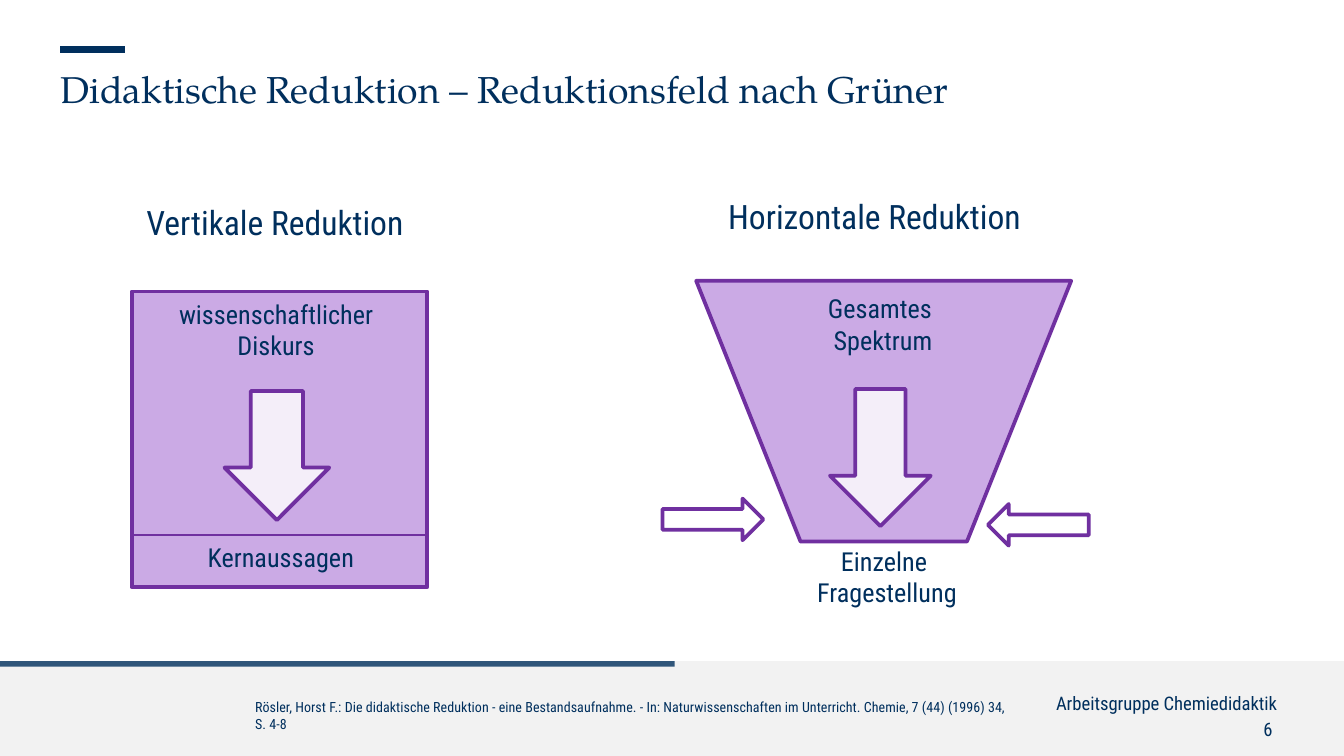
from lxml import etree
from pptx import Presentation
from pptx.dml.color import RGBColor
from pptx.enum.shapes import MSO_CONNECTOR, MSO_SHAPE
from pptx.enum.text import MSO_ANCHOR, PP_ALIGN
from pptx.oxml.ns import qn
from pptx.util import Inches, Pt

LEFT, CENTER, RIGHT = PP_ALIGN.LEFT, PP_ALIGN.CENTER, PP_ALIGN.RIGHT
RECTANGLE, TRAPEZOID = MSO_SHAPE.RECTANGLE, MSO_SHAPE.TRAPEZOID
ARROW = MSO_SHAPE.RIGHT_ARROW
TOP, STRAIGHT = MSO_ANCHOR.TOP, MSO_CONNECTOR.STRAIGHT

THEME = {
    "navy": "002F5D", "grey": "F2F2F2", "lilac": "BF95DF",
    "purple": "7030A0", "white": "FFFFFF",
    "body": "Roboto Condensed", "serif": "TeX Gyre Pagella",
    "title": 20, "heading": 18, "label": 14, "footer": 10, "source": 7.5,
    "outline": 2, "divider": 1, "accent": 3.5,
}

# kind, (left, top, width, height), fill, opacity %, outline, rotation
FOOTER_SHAPES = [
    (RECTANGLE, (0, 4.92, 10, 0.71), "grey", 100, None, 0),
    (RECTANGLE, (0, 4.92, 5.02, 0.04), "navy", 80, None, 0),
]
FIELD_SHAPES = [
    (TRAPEZOID, (5.18, 2.09, 2.79, 1.94), "lilac", 80, "purple", 180),
    (ARROW, (6.04, 3.03, 1.02, 0.75), "white", 80, "purple", 90),
    (ARROW, (4.93, 3.71, 0.75, 0.31), "white", 80, "purple", 0),
    (ARROW, (7.35, 3.75, 0.75, 0.31), "white", 80, "purple", 180),
    (RECTANGLE, (0.98, 2.17, 2.2, 2.2), "lilac", 80, "purple", 0),
    (ARROW, (1.58, 3, 0.96, 0.78), "white", 80, "purple", 90),
]
TRAPEZOID_SLANT = 0.4

# start, end, color, width
LINES = [
    ((0.45, 0.37), (0.93, 0.37), "navy", "accent"),
    ((0.98, 3.98), (3.19, 3.98), "purple", "divider"),
]

# paragraphs, (left, top, width, height), size, font, alignment, has insets
TEXTS = [
    (["Arbeitsgruppe Chemiedidaktik"], (3.38, 5.1, 6.22, 0.16),
     "footer", "body", RIGHT, True),
    (["6 "], (3.85, 5.34, 5.65, 0.17), "footer", "body", RIGHT, False),
    (["Didaktische Reduktion – Reduktionsfeld nach Grüner"],
     (0.45, 0.49, 7, 0.34), "title", "serif", LEFT, False),
    (["Rösler, Horst F.: Die didaktische Reduktion - eine Bestandsaufnahme. - "
      "In: Naturwissenschaften im Unterricht. Chemie, 7 (44) (1996) 34, S. 4-8"],
     (1.8, 5.15, 5.83, 0.44), "source", "body", LEFT, True),
    (["Horizontale Reduktion"], (5.32, 1.41, 3.14, 0.46),
     "heading", "body", LEFT, True),
    (["Gesamtes ", "Spektrum"], (5.9, 2.13, 1.34, 0.66),
     "label", "body", CENTER, True),
    (["Einzelne ", "Fragestellung"], (5.78, 4.01, 1.64, 0.66),
     "label", "body", CENTER, True),
    (["Vertikale Reduktion"], (0.99, 1.45, 2.92, 0.53),
     "heading", "body", LEFT, True),
    (["wissenschaftlicher", "Diskurs"], (0.92, 2.17, 2.27, 0.75),
     "label", "body", CENTER, True),
    (["Kernaussagen"], (1.2, 3.98, 1.78, 0.44),
     "label", "body", CENTER, True),
]


def color(name):
    return RGBColor.from_string(THEME[name])


def add_shape(page, kind, place, fill, opacity, outline, rotation):
    shape = page.shapes.add_shape(kind, *map(Inches, place))
    shape.shadow.inherit = False
    shape.rotation = rotation
    if kind == TRAPEZOID:
        shape.adjustments[0] = TRAPEZOID_SLANT
    shape.fill.solid()
    shape.fill.fore_color.rgb = color(fill)
    if opacity < 100:
        tone = shape.fill._xPr.find(qn("a:solidFill"))[0]
        etree.SubElement(tone, qn("a:alpha")).set("val", str(opacity * 1000))
    if outline:
        shape.line.color.rgb = color(outline)
        shape.line.width = Pt(THEME["outline"])
    else:
        shape.line.fill.background()


def add_line(page, start, end, tone, width):
    line = page.shapes.add_connector(STRAIGHT, *map(Inches, start + end))
    line.line.color.rgb = color(tone)
    line.line.width = Pt(THEME[width])
    etree.SubElement(line._element.spPr, qn("a:effectLst"))


def add_text(page, paragraphs, place, size, font, alignment, has_insets):
    box = page.shapes.add_textbox(*map(Inches, place))
    frame = box.text_frame
    frame.word_wrap = True
    frame.vertical_anchor = TOP
    if not has_insets:
        for side in ("left", "top", "right", "bottom"):
            setattr(frame, f"margin_{side}", 0)
    font_format = {"name": THEME[font], "size": Pt(THEME[size])}
    for index, words in enumerate(paragraphs):
        para = frame.add_paragraph() if index else frame.paragraphs[0]
        para.alignment = alignment
        span = para.add_run()
        span.text = words
        for attribute, value in font_format.items():
            setattr(span.font, attribute, value)
        span.font.color.rgb = color("navy")


def main():
    deck = Presentation()
    deck.slide_width = Inches(10)
    deck.slide_height = Inches(10 * 9 / 16)
    page = deck.slides.add_slide(deck.slide_layouts[6])
    for shape in FOOTER_SHAPES + FIELD_SHAPES:
        add_shape(page, *shape)
    for line in LINES:
        add_line(page, *line)
    for text in TEXTS:
        add_text(page, *text)
    deck.save("out.pptx")


if __name__ == "__main__":
    main()
